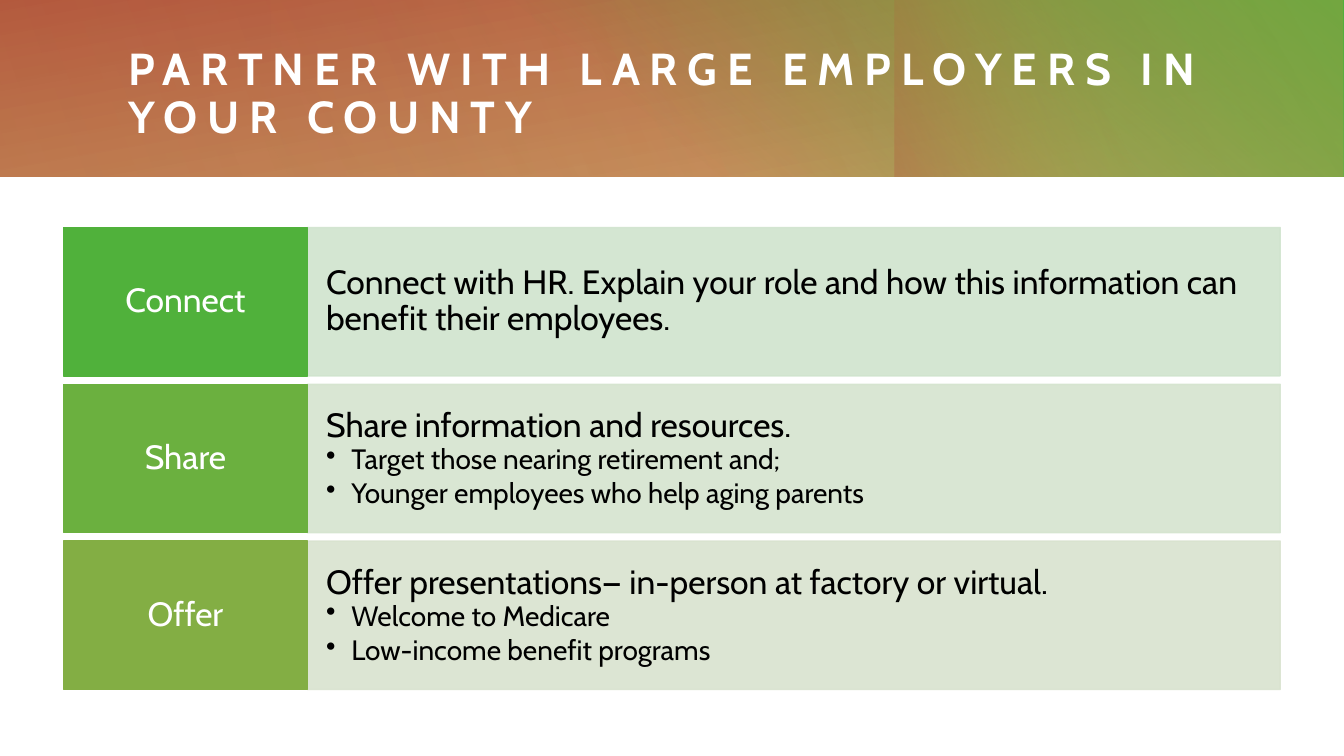
from lxml.etree import SubElement
from pptx import Presentation
from pptx.dml.color import RGBColor
from pptx.enum.shapes import MSO_SHAPE
from pptx.enum.text import MSO_ANCHOR, MSO_AUTO_SIZE, PP_ALIGN
from pptx.oxml.ns import qn
from pptx.util import Pt

WHITE = RGBColor(0xFF, 0xFF, 0xFF)
BLACK = RGBColor(0x00, 0x00, 0x00)
TAN = RGBColor(0xC3, 0x91, 0x4D)
RUST = RGBColor(0xB1, 0x4D, 0x3B)
OLIVE = RGBColor(0xA6, 0xA5, 0x37)
GREEN = RGBColor(0x50, 0xB1, 0x3B)
LEAF = RGBColor(0x6B, 0xB0, 0x3F)
MOSS = RGBColor(0x83, 0xAE, 0x44)
PALE_GREEN = RGBColor(0xD0, 0xE4, 0xCE)
PALE_LEAF = RGBColor(0xD5, 0xE4, 0xCF)
PALE_MOSS = RGBColor(0xD9, 0xE3, 0xCF)

FONT = "Cabin"
TITLE = "PARTNER WITH LARGE EMPLOYERS IN YOUR COUNTY"
LABEL_WIDTH, ROW_GAP = 174, 6

BANNER_LAYERS = [
    ((0, 0, 960, 126), 0, 260, [(0, TAN, 83), (1, RUST, 100)]),
    ((346, 0, 614, 126), 0, 310, [(0.22, GREEN, 0), (0.99, GREEN, 100)]),
    ((710.5, -71.5, 126, 269), 270, 250, [(0.45, OLIVE, 0), (0.99, RUST, 33)]),
    ((193, 0, 766, 126), 180, 330, [(0, TAN, 30), (0.99, TAN, 0)]),
    ((0, 0, 623, 126), 0, 340, [(0, TAN, 21), (0.99, TAN, 0)]),
]

STEPS = [
    ("Connect", GREEN, PALE_GREEN,
     "Connect with HR. Explain your role and how this information can benefit their employees.", []),
    ("Share", LEAF, PALE_LEAF, "Share information and resources.",
     ["Target those nearing retirement and;", "Younger employees who help aging parents"]),
    ("Offer", MOSS, PALE_MOSS, "Offer presentations— in-person at factory or virtual.",
     ["Welcome to Medicare", "Low-income benefit programs"]),
]


def apply_format(target, values):
    for name, value in values.items():
        setattr(target, name, value)


def set_opacity(holder, percent):
    for colour in holder.iter(qn("a:srgbClr")):
        SubElement(colour, qn("a:alpha"), val=str(percent * 1000))


def add_rectangle(slide, box):
    rectangle = slide.shapes.add_shape(MSO_SHAPE.RECTANGLE, *map(Pt, box))
    rectangle.shadow.inherit = False
    return rectangle


def write_paragraph(paragraph, text, size, colour, **layout):
    apply_format(paragraph, {"line_spacing": 0.9, "alignment": PP_ALIGN.LEFT, **layout})
    run = paragraph.add_run()
    run.text = text
    apply_format(run.font, {"name": FONT, "size": Pt(size)})
    run.font.color.rgb = colour
    return run


def add_bullet(paragraph):
    properties = paragraph._p.get_or_add_pPr()
    properties.set("marL", str(Pt(18)))
    properties.set("indent", str(Pt(-18)))
    SubElement(properties, qn("a:buChar"), char="•")


def add_banner(slide, box):
    left, top = box[:2]
    for (x, y, width, height), rotation, angle, stops in BANNER_LAYERS:
        layer = add_rectangle(slide, (left + x, top + y, width, height))
        layer.rotation = rotation
        layer.line.fill.background()
        layer.fill.gradient()
        layer.fill.gradient_angle = 360 - angle
        for stop, (position, colour, opacity) in zip(layer.fill.gradient_stops, stops):
            stop.position = position
            stop.color.rgb = colour
            set_opacity(stop._gs, opacity)


def add_title(slide, box):
    title = slide.shapes.title
    slide.shapes._spTree.append(title._element)
    apply_format(title, dict(zip(("left", "top", "width", "height"), map(Pt, box))))
    apply_format(title.text_frame, {
        "margin_left": 0, "margin_right": 0, "margin_top": 0, "margin_bottom": 0,
        "word_wrap": True, "auto_size": MSO_AUTO_SIZE.NONE,
        "vertical_anchor": MSO_ANCHOR.MIDDLE,
    })
    run = write_paragraph(title.text_frame.paragraphs[0], TITLE, 32, WHITE)
    run.font.bold = True
    run.font._element.set("spc", "700")


def add_cell(slide, box, colour, opacity, side_margin, end_margin, anchor):
    cell = add_rectangle(slide, box)
    for fill in (cell.fill, cell.line.fill):
        fill.solid()
        fill.fore_color.rgb = colour
    cell.line.width = Pt(1)
    if opacity < 100:
        set_opacity(cell._element.spPr, opacity)
    apply_format(cell.text_frame, {
        "margin_left": Pt(side_margin), "margin_right": Pt(side_margin),
        "margin_top": Pt(end_margin), "margin_bottom": Pt(end_margin),
        "word_wrap": True, "vertical_anchor": anchor,
    })
    return cell.text_frame


def add_step(slide, box, step):
    left, top, width, height = box
    label, colour, pale_colour, statement, details = step
    anchor = MSO_ANCHOR.TOP if details else MSO_ANCHOR.MIDDLE
    body = add_cell(slide, (left + LABEL_WIDTH, top, width - LABEL_WIDTH, height),
                    pale_colour, 90, 13.5, 26.5, anchor)
    lead_layout = {"line_spacing": 0.5, "space_after": Pt(2.5)} if details else {}
    write_paragraph(body.paragraphs[0], statement, 24, BLACK, **lead_layout)
    for detail in details:
        paragraph = body.add_paragraph()
        write_paragraph(paragraph, detail, 20, BLACK, level=1, space_after=Pt(3))
        add_bullet(paragraph)
    heading = add_cell(slide, (left, top, LABEL_WIDTH, height),
                       colour, 100, 9.5, 10, MSO_ANCHOR.MIDDLE)
    write_paragraph(heading.paragraphs[0], label, 24, WHITE, alignment=PP_ALIGN.CENTER)


def add_steps(slide, box):
    left, top, width, height = box
    row_height = (height - ROW_GAP * (len(STEPS) - 1)) / len(STEPS)
    for index, step in enumerate(STEPS):
        row_top = top + index * (row_height + ROW_GAP)
        add_step(slide, (left, row_top, width, row_height), step)


def main():
    presentation = Presentation()
    apply_format(presentation, {"slide_width": Pt(960), "slide_height": Pt(540)})
    slide = presentation.slides.add_slide(presentation.slide_layouts[5])
    add_banner(slide, (0, 0, 960, 126))
    add_title(slide, (91.5, 29.5, 817, 76.5))
    add_steps(slide, (45.5, 162.5, 869, 330))
    presentation.save("out.pptx")


if __name__ == "__main__":
    main()
